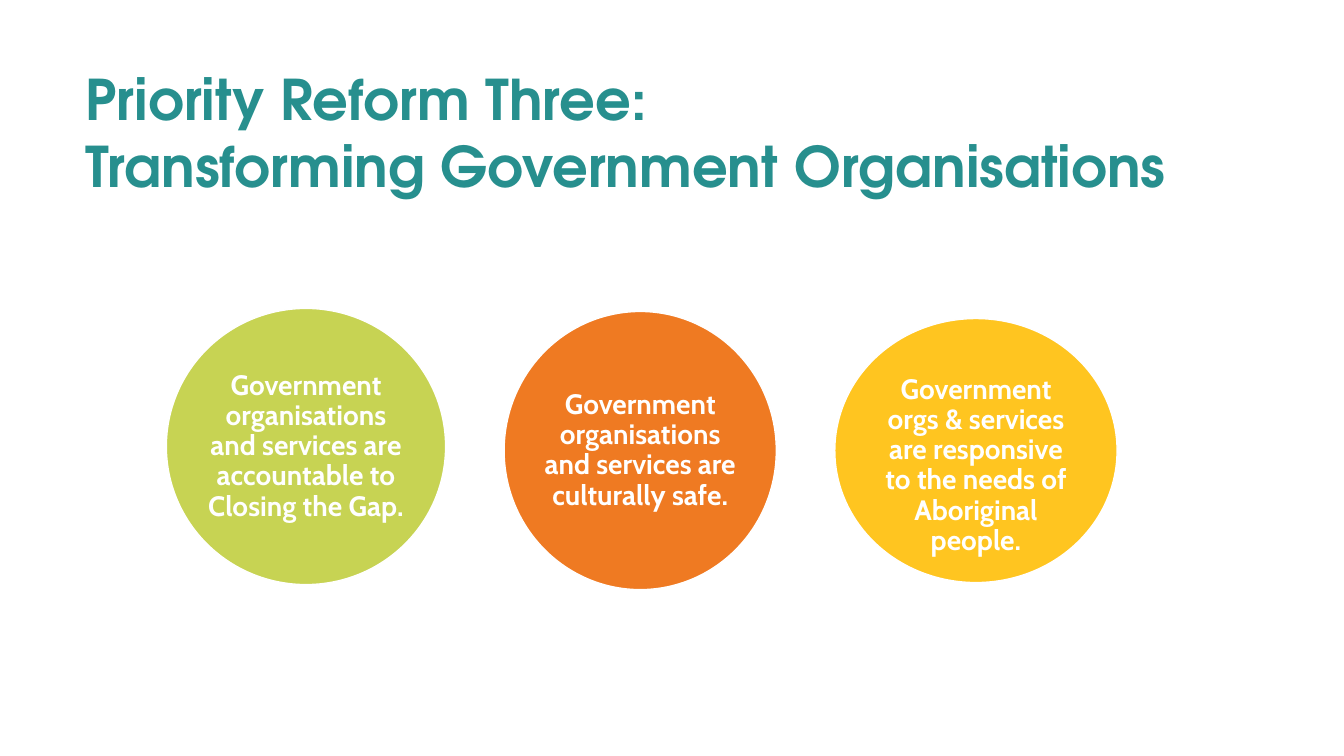
from pptx import Presentation
from pptx import util as u
from pptx.dml.color import RGBColor
from pptx.enum import shapes, text

HUES = {"teal": "278F8E", "lime": "C7D353", "orange": "EF7A22",
        "gold": "FFC520", "white": "FFFFFF"}
WIDE, HIGH = 13.33, 7.5

TITLE = "Priority Reform Three:\vTransforming Government Organisations"
# words, hue, disc (left, top, width, height), extra depth of the label
GOALS = [
    ("Government organisations and services are accountable to Closing the Gap.",
     "lime", (1.65, 3.06, 2.77, 2.74), 0),
    ("Government organisations and services are culturally safe.",
     "orange", (5, 3.09, 2.7, 2.76), 0),
    ("Government orgs & services are responsive to the needs of Aboriginal people.",
     "gold", (8.28, 3.16, 2.8, 2.62), 0.3),
]
INSET = 0.146  # share of a disc left clear on each side of its label
HEAD = {"name": "TeX Gyre Adventor", "size": u.Pt(40), "bold": True}
BODY = {"name": "Cabin", "size": u.Pt(20), "bold": True}
BARE = {"margin_left": 0, "margin_top": 0, "margin_right": 0,
        "margin_bottom": 0, "vertical_anchor": text.MSO_ANCHOR.MIDDLE}


def tint(hue):
    return RGBColor.from_string(HUES[hue])


def put(item, vals):
    for key, val in vals.items():
        setattr(item, key, val)


def label(slide, words, place, font, hue, frame, para):
    box = slide.shapes.add_textbox(*map(u.Inches, place))
    put(box.text_frame, {"word_wrap": True, **frame})
    line = box.text_frame.paragraphs[0]
    line.text = words
    put(line, para)
    for run in line.runs:
        put(run.font, font)
        run.font.color.rgb = tint(hue)


def disc(slide, place, hue):
    oval = slide.shapes.add_shape(shapes.MSO_SHAPE.OVAL, *map(u.Inches, place))
    oval.shadow.inherit = False
    oval.fill.solid()
    oval.fill.fore_color.rgb = tint(hue)
    oval.line.color.rgb = tint("white")
    oval.line.width = u.Pt(1)


def main():
    deck = Presentation()
    put(deck, {"slide_width": u.Inches(WIDE), "slide_height": u.Inches(HIGH)})
    slide = deck.slides.add_slide(deck.slide_layouts[6])

    # Title
    label(slide, TITLE, (0.75, 0.59, 11.18, 1.45), HEAD, "teal",
          {"auto_size": text.MSO_AUTO_SIZE.SHAPE_TO_FIT_TEXT},
          {"space_after": u.Pt(6)})

    # Discs with their labels
    for words, hue, (left, top, wide, high), extra in GOALS:
        disc(slide, (left, top, wide, high), hue)
        share = 1 - 2 * INSET
        place = (left + wide * INSET, top + high * INSET,
                 wide * share, high * share + extra)
        label(slide, words, place, BODY, "white", BARE,
              {"alignment": text.PP_ALIGN.CENTER, "line_spacing": 0.9})

    deck.save("out.pptx")


if __name__ == "__main__":
    main()
